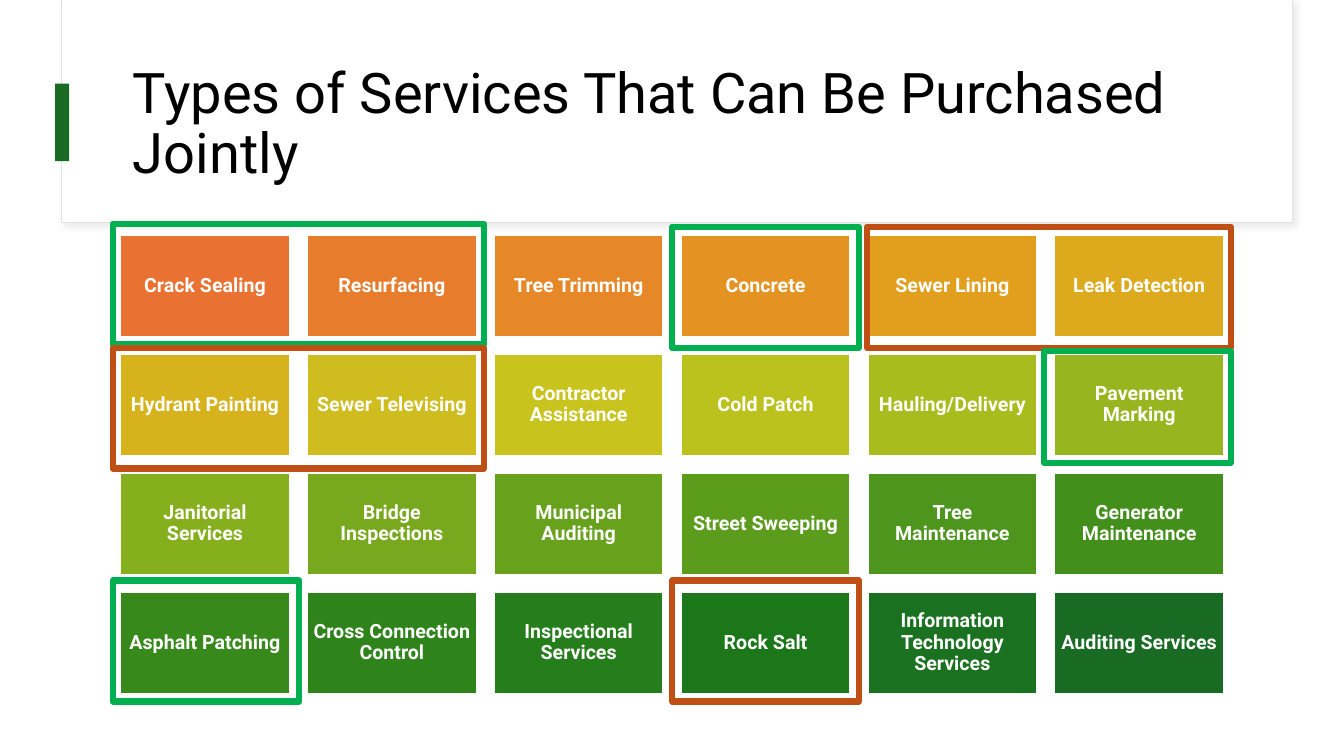
from lxml import etree
from pptx import Presentation
from pptx.dml.color import RGBColor
from pptx.enum.shapes import MSO_SHAPE
from pptx.enum.text import MSO_ANCHOR, MSO_AUTO_SIZE, PP_ALIGN
from pptx.oxml.ns import qn
from pptx.util import Pt

hex_color = RGBColor.from_string


def add_box(left, top, width, height, fill=None, line=None, weight=0):
    shape = slide.shapes.add_shape(MSO_SHAPE.RECTANGLE, Pt(left), Pt(top), Pt(width), Pt(height))
    shape.shadow.inherit = False
    if fill:
        shape.fill.solid()
        shape.fill.fore_color.rgb = hex_color(fill)
    else:
        shape.fill.background()
    if line:
        shape.line.color.rgb = hex_color(line)
        shape.line.width = Pt(weight)
    else:
        shape.line.fill.background()
    return shape


def write_text(shape, text, size, color, bold=False, align=PP_ALIGN.LEFT, inset_x=7.2, inset_y=3.6):
    frame = shape.text_frame
    frame.word_wrap = True
    frame.auto_size = MSO_AUTO_SIZE.NONE
    frame.vertical_anchor = MSO_ANCHOR.MIDDLE
    frame.margin_left = frame.margin_right = Pt(inset_x)
    frame.margin_top = frame.margin_bottom = Pt(inset_y)
    paragraph = frame.paragraphs[0]
    paragraph.alignment = align
    paragraph.line_spacing = 0.9
    run = paragraph.add_run()
    run.text = text
    run.font.name = "Roboto"
    run.font.size = Pt(size)
    run.font.bold = bold
    run.font.color.rgb = hex_color(color)


presentation = Presentation()
presentation.slide_width = Pt(960)
presentation.slide_height = Pt(540)
slide = presentation.slides.add_slide(presentation.slide_layouts[5])
slide.background.fill.solid()
slide.background.fill.fore_color.rgb = hex_color("FFFFFF")

panel = add_box(44, 0, 879, 159, "FFFFFF", "E1E1E1", 0.75)
effects = panel.element.spPr.find(qn("a:effectLst"))
shadow = etree.SubElement(
    effects, qn("a:outerShdw"), blurRad=str(Pt(4)), dist=str(Pt(3)), dir="2700000", algn="tl", rotWithShape="0"
)
shadow_color = etree.SubElement(shadow, qn("a:srgbClr"), val="D9D9D9")
etree.SubElement(shadow_color, qn("a:alpha"), val="50000")
add_box(44.6, 0, 878.4, 158.4, "FFFFFF")

title = slide.shapes.title
title.left, title.top, title.width, title.height = Pt(87.8), Pt(43.2), Pt(800.6), Pt(92.9)
write_text(title, "Types of Services That Can Be Purchased Jointly", 40, "000000")
title.element.getparent().append(title.element)
add_box(39.4, 59.8, 10.1, 55.4, "196B24")

services = [
    ("Crack Sealing", "E97132"),
    ("Resurfacing", "E77C2D"),
    ("Tree Trimming", "E68728"),
    ("Concrete", "E49323"),
    ("Sewer Lining", "E29F1E"),
    ("Leak Detection", "DDAA1D"),
    ("Hydrant Painting", "D6B31D"),
    ("Sewer Televising", "CFBC1E"),
    ("Contractor Assistance", "C9C31E"),
    ("Cold Patch", "BBC21E"),
    ("Hauling/Delivery", "A8BC1E"),
    ("Pavement Marking", "97B51E"),
    ("Janitorial Services", "86AF1E"),
    ("Bridge Inspections", "77A81D"),
    ("Municipal Auditing", "68A21D"),
    ("Street Sweeping", "5B9C1D"),
    ("Tree Maintenance", "4E951D"),
    ("Generator Maintenance", "438F1C"),
    ("Asphalt Patching", "38891C"),
    ("Cross Connection Control", "2E831B"),
    ("Inspectional Services", "257D1B"),
    ("Rock Salt", "1C771A"),
    ("Information Technology Services", "1A711F"),
    ("Auditing Services", "196B24"),
]
for index, (service, fill) in enumerate(services):
    row, column = divmod(index, 6)
    tile = add_box(85.9 + column * 133.45, 167.8 + row * 85, 121.2, 72.7, fill, "FFFFFF", 1.5)
    write_text(tile, service, 14, "FFFFFF", bold=True, align=PP_ALIGN.CENTER, inset_x=4.2, inset_y=4.2)

green, rust = "00B050", "C04F15"
highlights = [
    (80.6, 159.8, 265, 86.4, green),
    (80.6, 414.7, 133.2, 86.4, green),
    (480.2, 414.7, 133.2, 86.4, rust),
    (480.2, 162, 133.2, 86.4, green),
    (80.6, 248.4, 265, 86.4, rust),
    (619.2, 162, 259.9, 86.4, rust),
    (745.9, 250.6, 133.2, 79.9, green),
]
for left, top, width, height, line in highlights:
    add_box(left, top, width, height, line=line, weight=4.5)

presentation.save("out.pptx")
